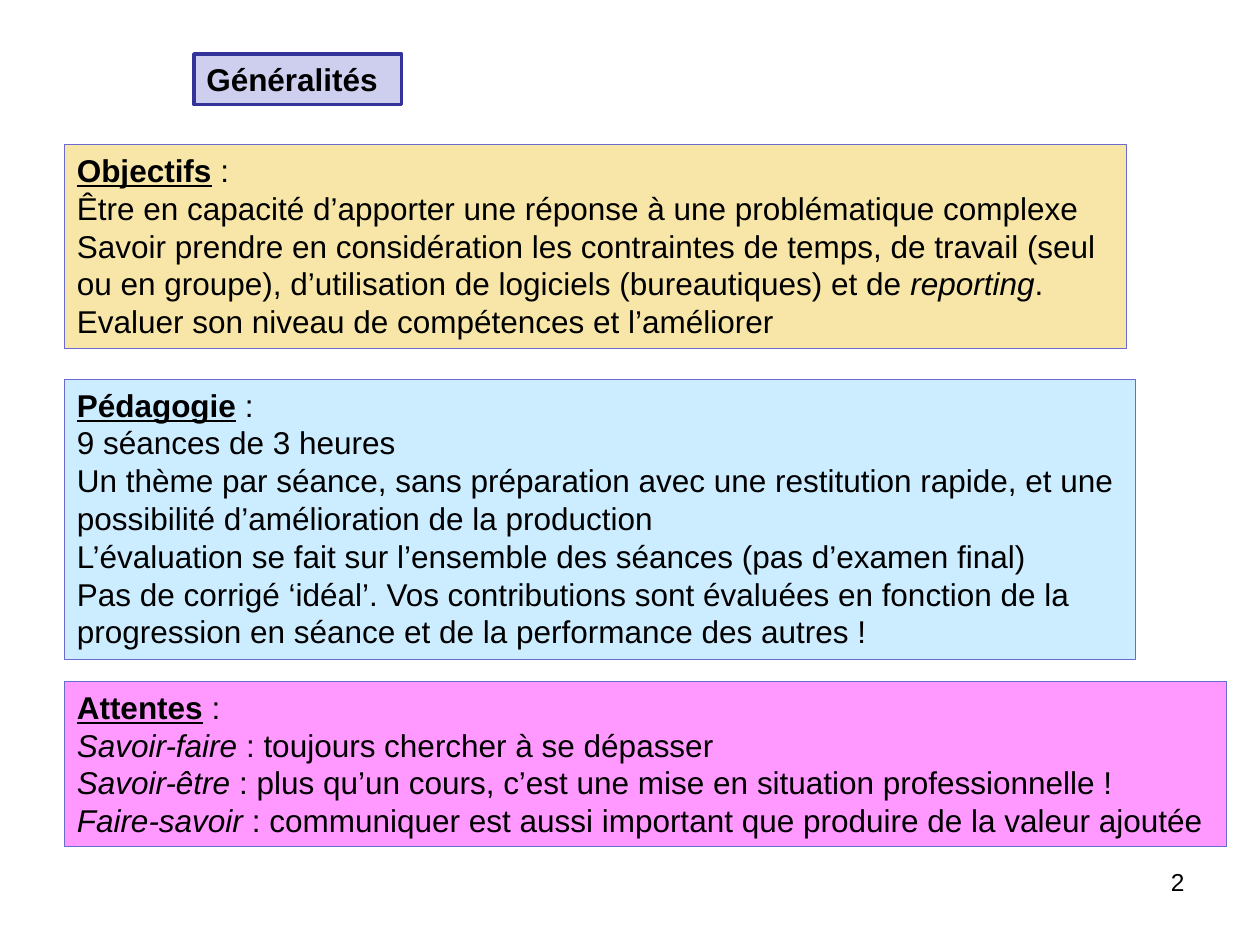
"""Build the course overview slide: goals, teaching method and expectations."""
from pptx import Presentation
from pptx.dml.color import RGBColor
from pptx.enum.shapes import MSO_SHAPE as SHAPE
from pptx.enum.text import MSO_ANCHOR as ANCHOR, MSO_AUTO_SIZE as AUTO, PP_ALIGN as ALIGN
from pptx.util import Cm, Pt


def rgb(color):
    return RGBColor.from_string(color)


def add_text(tf, paragraphs, size=18, align=ALIGN.LEFT):
    tf.vertical_anchor = ANCHOR.TOP
    for i, runs in enumerate(paragraphs):
        p = tf.add_paragraph() if i else tf.paragraphs[0]
        p.alignment = align
        for text, style in runs:
            r = p.add_run()
            r.text = text
            r.font.name = "Arial"
            r.font.size = Pt(size)
            r.font.color.rgb = rgb("000000")
            r.font.bold = "b" in style
            r.font.italic = "i" in style
            r.font.underline = "u" in style


prs = Presentation()
prs.slide_width, prs.slide_height = Cm(25.4), Cm(19.05)
s = prs.slides.add_slide(prs.slide_layouts[6])

title = [[("Généralités", "b")]]
goals = [
    [("Objectifs", "bu"), (" :", "")],
    [("Être en capacité d’apporter une réponse à une problématique complexe", "")],
    [("Savoir prendre en considération les contraintes de temps, de travail (seul", "")],
    [("ou en groupe), d’utilisation de logiciels (bureautiques) et de ", ""),
     ("reporting", "i"), (".", "")],
    [("Evaluer son niveau de compétences et l’améliorer", "")],
]
teaching = [
    [("Pédagogie", "bu"), (" :", "")],
    [("9 séances de 3 heures", "")],
    [("Un thème par séance, sans préparation avec une restitution rapide, et une", "")],
    [("possibilité d’amélioration de la production", "")],
    [("L’évaluation se fait sur l’ensemble des séances (pas d’examen final)", "")],
    [("Pas de corrigé ‘idéal’. Vos contributions sont évaluées en fonction de la", "")],
    [("progression en séance et de la performance des autres !", "")],
]
expectations = [
    [("Attentes", "bu"), (" :", "")],
    [("Savoir-faire", "i"), (" : toujours chercher à se dépasser", "")],
    [("Savoir-être", "i"),
     (" : plus qu’un cours, c’est une mise en situation professionnelle !", "")],
    [("Faire-savoir", "i"),
     (" : communiquer est aussi important que produire de la valeur ajoutée", "")],
]

boxes = [
    (3.91, 1.09, 4.19, 1.02, "CECEEF", "333399", 2, True, title),
    (1.3, 2.92, 21.41, 4.11, "F7E6A7", "6B6BCF", 0.75, False, goals),
    (1.3, 7.65, 21.59, 5.64, "CCECFF", "6B6BCF", 0.75, False, teaching),
    (1.3, 13.74, 23.42, 3.33, "FF99FF", "6B6BCF", 0.75, False, expectations),
]
for x, y, w, h, fill, line, weight, wrap, paragraphs in boxes:
    sp = s.shapes.add_shape(SHAPE.RECTANGLE, Cm(x), Cm(y), Cm(w), Cm(h))
    sp.shadow.inherit = False
    sp.fill.solid()
    sp.fill.fore_color.rgb = rgb(fill)
    sp.line.color.rgb = rgb(line)
    sp.line.width = Pt(weight)
    tf = sp.text_frame
    tf.word_wrap = wrap
    tf.auto_size = AUTO.SHAPE_TO_FIT_TEXT
    add_text(tf, paragraphs)

sp = s.shapes.add_textbox(Cm(18.21), Cm(17.35), Cm(5.92), Cm(1.32))
sp.text_frame.word_wrap = True
add_text(sp.text_frame, [[("2", "")]], 14, ALIGN.RIGHT)

prs.save("out.pptx")
